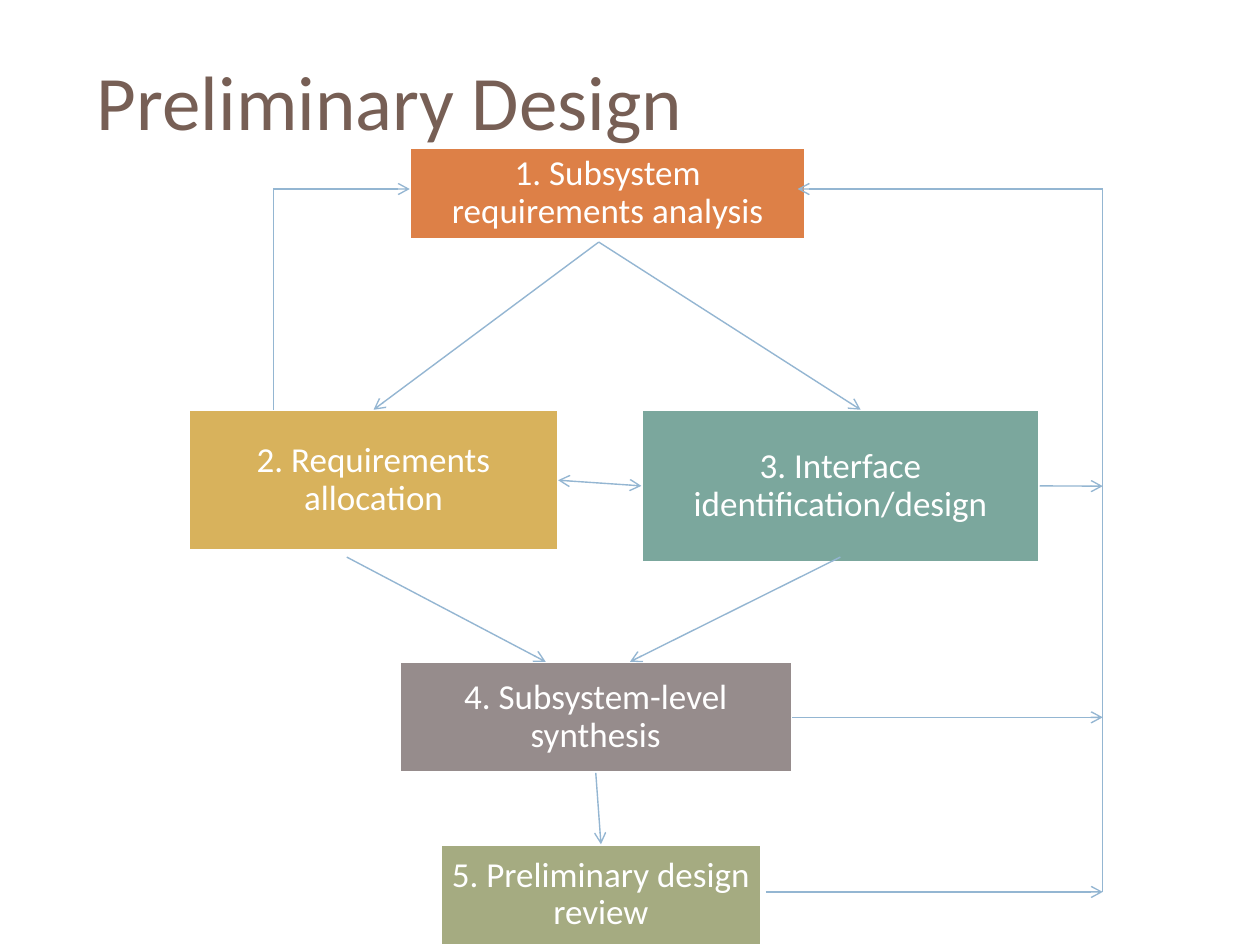
"""Build the Preliminary Design flow slide."""
import pptx
import pptx.util
import pptx.dml.color
import pptx.enum.shapes
import pptx.enum.text
import pptx.oxml
import pptx.oxml.ns

Cm = pptx.util.Cm
Pt = pptx.util.Pt

TITLE = "Preliminary Design"
STEPS = {
    "analysis": ("1. Subsystem requirements analysis", "DD8047", (8.26, 2.97, 7.98, 1.85)),
    "review": ("5. Preliminary design review", "A5AB81", (8.89, 17.02, 6.45, 2.03)),
    "allocation": ("2. Requirements allocation", "D8B25C", (3.81, 8.26, 7.44, 2.84)),
    "interface": ("3. Interface identification/design", "7BA79D", (12.93, 8.26, 8.03, 3.07)),
    "synthesis": ("4. Subsystem-level synthesis", "968C8C", (8.05, 13.34, 7.92, 2.24)),
}
TOP, LEFT, BOTTOM, RIGHT = range(4)
APEX = (12.07, 4.88)
LOOP_X, BUS_X = 5.51, 22.23
RETURN_Y, REVIEW_Y = 3.81, 17.98
FLOWS = [
    (APEX, ("allocation", TOP), "tail"),
    (APEX, (17.35, 8.26), "tail"),
    (("allocation", RIGHT), ("interface", LEFT), "head tail"),
    ((6.99, 11.23), (11, 13.34), "tail"),
    ((16.94, 11.23), (12.7, 13.34), "tail"),
    (("synthesis", BOTTOM), ("review", TOP), "tail"),
    ((LOOP_X, 8.26), (LOOP_X, RETURN_Y), ""),
    ((BUS_X, REVIEW_Y), (BUS_X, RETURN_Y), ""),
    ((LOOP_X, RETURN_Y), (8.26, RETURN_Y), "tail"),
    ((15.44, REVIEW_Y), (BUS_X, REVIEW_Y), "tail"),
    (("synthesis", RIGHT), (BUS_X, 14.46), "tail"),
    (("interface", RIGHT), (BUS_X, 9.8), "tail"),
    ((BUS_X, RETURN_Y), (16.08, RETURN_Y), "tail"),
]


def color(value):
    return pptx.dml.color.RGBColor.from_string(value)


def place(shape, bounds):
    shape.left, shape.top, shape.width, shape.height = map(Cm, bounds)


def write(shape, text, size, ink, align, spacing=None):
    frame = shape.text_frame
    frame.word_wrap = True
    frame.vertical_anchor = pptx.enum.text.MSO_ANCHOR.MIDDLE
    para = frame.paragraphs[0]
    para.alignment = align
    para.line_spacing = spacing
    span = para.add_run()
    span.text = text
    span.font.name = "Calibri"
    span.font.size = Pt(size)
    span.font.color.rgb = color(ink)


def add_step(page, text, fill, bounds):
    box = page.shapes.add_shape(pptx.enum.shapes.MSO_SHAPE.RECTANGLE, *map(Cm, bounds))
    box.shadow.inherit = False
    box.fill.solid()
    box.fill.fore_color.rgb = color(fill)
    box.line.color.rgb = color("FFFFFF")
    box.line.width = Pt(1.5)
    frame = box.text_frame
    frame.margin_left = frame.margin_right = frame.margin_top = frame.margin_bottom = Cm(0.2)
    write(box, text, 20, "FFFFFF", pptx.enum.text.PP_ALIGN.CENTER, spacing=0.9)
    return box


def add_flow(page, boxes, start, end, arrows):
    points = [(0, 0) if point[0] in boxes else point for point in (start, end)]
    flow = page.shapes.add_connector(
        pptx.enum.shapes.MSO_CONNECTOR.STRAIGHT, *(Cm(n) for point in points for n in point))
    for point, join in ((start, flow.begin_connect), (end, flow.end_connect)):
        if point[0] in boxes:
            join(boxes[point[0]], point[1])
    flow.line.color.rgb = color("94B6D2")
    flow.line.width = Pt(0.79)
    outline = flow.line._get_or_add_ln()
    for side in arrows.split():
        mark = pptx.oxml.parse_xml(
            f'<a:{side}End {pptx.oxml.ns.nsdecls("a")} type="arrow"/>')
        outline.append(mark)
    effects = pptx.oxml.parse_xml(f'<a:effectLst {pptx.oxml.ns.nsdecls("a")}/>')
    flow._element.spPr.append(effects)


def main():
    deck = pptx.Presentation()
    deck.slide_width, deck.slide_height = Cm(25.4), Cm(19.05)
    page = deck.slides.add_slide(deck.slide_layouts[5])
    title = page.shapes.title
    place(title, (1.7, 0.64, 22.66, 2.74))
    write(title, TITLE, 44, "775F55", pptx.enum.text.PP_ALIGN.LEFT)
    boxes = {name: add_step(page, *step) for name, step in STEPS.items()}
    for start, end, arrows in FLOWS:
        add_flow(page, boxes, start, end, arrows)
    deck.save("out.pptx")


if __name__ == "__main__":
    main()
